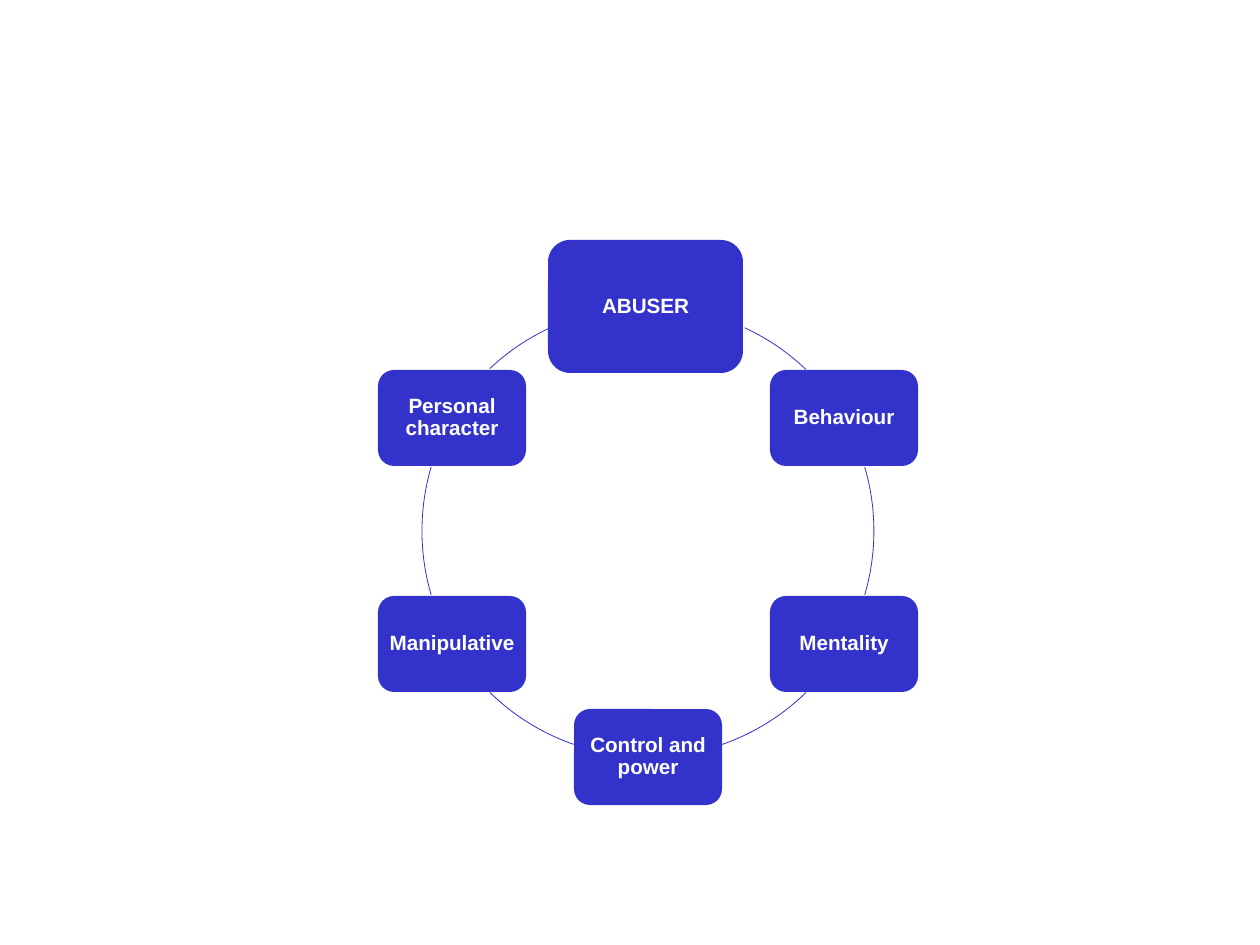
from math import cos, radians, sin

from pptx import Presentation
from pptx.dml.color import RGBColor
from pptx.enum.shapes import MSO_SHAPE as Preset
from pptx.enum.text import MSO_ANCHOR as Anchor, PP_ALIGN as Align
from pptx.util import Pt

PX = 8000  # the slide is 1260 by 945 px, or 280 by 210 mm
BLUE = RGBColor(0x33, 0x33, 0xCC)
WHITE = RGBColor(0xFF, 0xFF, 0xFF)

CENTRE_X, CENTRE_Y, RADIUS = 648, 531, 226
INSET = 6

# Clockwise from the top: label, width, height, shift across and down
NODES = [
    ("ABUSER", 195, 133, -2, 1),
    ("Behaviour", 148, 96, 0, 0),
    ("Mentality", 148, 96, 0, 0),
    ("Control and power", 148, 96, 0, 0),
    ("Manipulative", 148, 96, 0, 0),
    ("Personal character", 148, 96, 0, 0),
]

# Start and end in degrees clockwise from the right, shift across and down
ARCS = [
    (294.8, 313.6, 2, 2),
    (343.6, 16.4, 0, 0),
    (45.6, 70.8, 0, 0),
    (109.2, 134.4, 0, 0),
    (163.6, 196.4, 0, 0),
    (226.6, 245, -3, 2),
]

deck = Presentation()
deck.slide_width, deck.slide_height = 1260 * PX, 945 * PX
page = deck.slides.add_slide(deck.slide_layouts[6])


def add_centred(preset, x, y, width, height):
    left, top = round(x - width / 2), round(y - height / 2)
    shape = page.shapes.add_shape(
        preset, left * PX, top * PX, width * PX, height * PX)
    shape.shadow.inherit = False
    return shape


for start, end, across, down in ARCS:
    arc = add_centred(Preset.ARC, CENTRE_X + across, CENTRE_Y + down,
                      2 * RADIUS, 2 * RADIUS)
    arc.adjustments[0] = start * 0.6
    arc.adjustments[1] = end * 0.6
    arc.fill.background()
    arc.line.color.rgb = BLUE
    arc.line.width = Pt(0.5)

for index, (label, width, height, across, down) in enumerate(NODES):
    angle = radians(index * 360 / len(NODES) - 90)
    box = add_centred(Preset.ROUNDED_RECTANGLE,
                      CENTRE_X + RADIUS * cos(angle) + across,
                      CENTRE_Y + RADIUS * sin(angle) + down,
                      width, height)
    box.fill.solid()
    box.fill.fore_color.rgb = BLUE
    box.line.fill.background()

    frame = box.text_frame
    frame.word_wrap = True
    frame.vertical_anchor = Anchor.MIDDLE
    for side in ("left", "top", "right", "bottom"):
        setattr(frame, f"margin_{side}", INSET * PX)

    para = frame.paragraphs[0]
    para.alignment = Align.CENTER
    para.line_spacing = 0.9
    span = para.add_run()
    span.text = label
    for name, value in {"name": "Arial", "size": Pt(13), "bold": True}.items():
        setattr(span.font, name, value)
    span.font.color.rgb = WHITE

deck.save("out.pptx")
